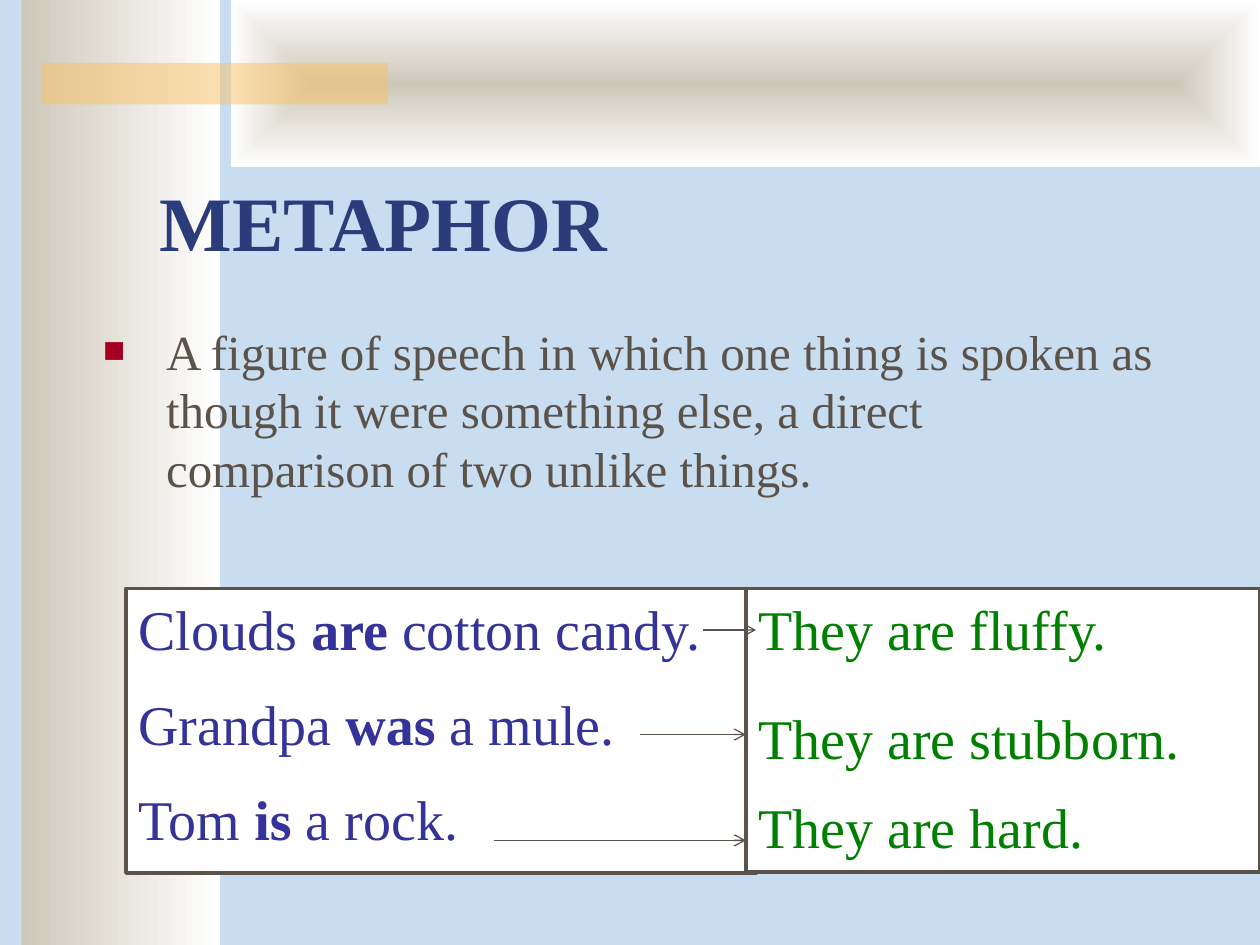
from dataclasses import dataclass

from lxml import etree
from pptx import Presentation
from pptx import util as u
from pptx.dml import color
from pptx.enum import shapes, text
from pptx.oxml import ns


@dataclass(frozen=True)
class Theme:
    font: str = "Times New Roman"
    background: str = "C9DDF1"
    sand: str = "CEC8BA"
    white: str = "FFFFFF"
    accent: str = "FAC164"
    title: str = "2A3D7A"
    body: str = "5B5249"
    bullet: str = "A50021"
    metaphor: str = "333399"
    meaning: str = "008000"
    title_size: int = 44
    body_size: int = 28
    example_size: int = 32


THEME = Theme()


def rgb(value):
    return color.RGBColor.from_string(value)


def add_xml(parent, tag, **attributes):
    return etree.SubElement(parent, ns.qn(tag), attributes)


def add_rectangle(slide, box, fill=None, line=None):
    shape = slide.shapes.add_shape(shapes.MSO_SHAPE.RECTANGLE, *map(u.Inches, box))
    shape.shadow.inherit = False
    if fill:
        shape.fill.solid()
        shape.fill.fore_color.rgb = rgb(fill)
    if line:
        shape.line.color.rgb = rgb(line)
        shape.line.width = u.Pt(2)
    else:
        shape.line.fill.background()
    return shape


def add_gradient_rectangle(slide, box, from_center=False):
    shape = add_rectangle(slide, box)
    shape.fill.gradient()
    shape.fill.gradient_angle = 0
    for stop, value, position in zip(
        shape.fill.gradient_stops, (THEME.sand, THEME.white), (0, 1)
    ):
        stop.color.rgb = rgb(value)
        stop.position = position
    if from_center:
        linear = shape.element.spPr.find(".//" + ns.qn("a:lin"))
        gradient = linear.getparent()
        gradient.remove(linear)
        focus = add_xml(gradient, "a:path", path="shape")
        add_xml(focus, "a:fillToRect", **dict.fromkeys("ltrb", "50000"))


def add_accent_bar(slide, box):
    bar = add_rectangle(slide, box, THEME.accent)
    fill_color = bar.element.spPr.find(ns.qn("a:solidFill"))[0]
    add_xml(fill_color, "a:alpha", val="50000")


def add_bullet(paragraph):
    properties = paragraph._p.get_or_add_pPr()
    indent = u.Inches(0.5)
    properties.set("marL", str(indent))
    properties.set("indent", str(-indent))
    add_xml(add_xml(properties, "a:buClr"), "a:srgbClr", val=THEME.bullet)
    add_xml(properties, "a:buSzPct", val="75000")
    add_xml(properties, "a:buFont", typeface=THEME.font)
    add_xml(properties, "a:buChar", char="■")


def write_text(shape, paragraphs, size, text_color, anchor="TOP", bullet=False):
    """Fill a shape with (space before, runs) pairs; every second run is bold."""
    frame = shape.text_frame
    frame.word_wrap = True
    frame.vertical_anchor = text.MSO_ANCHOR[anchor]
    for index, (space, runs) in enumerate(paragraphs):
        paragraph = frame.add_paragraph() if index else frame.paragraphs[0]
        paragraph.alignment = text.PP_ALIGN.LEFT
        if space:
            paragraph.space_before = u.Pt(space)
        if bullet:
            add_bullet(paragraph)
        for position, words in enumerate(runs):
            if not words:
                continue
            run = paragraph.add_run()
            run.text = words
            formats = {"name": THEME.font, "size": u.Pt(size), "bold": position % 2 == 1}
            for name, value in formats.items():
                setattr(run.font, name, value)
            run.font.color.rgb = rgb(text_color)


def add_text(slide, box, *content, **options):
    write_text(slide.shapes.add_textbox(*map(u.Inches, box)), *content, **options)


def add_example_box(slide, box, paragraphs, text_color):
    shape = add_rectangle(slide, box, THEME.white, THEME.body)
    write_text(shape, paragraphs, THEME.example_size, text_color)


def add_arrow(slide, start, end, y):
    arrow = slide.shapes.add_connector(
        shapes.MSO_CONNECTOR.STRAIGHT, *map(u.Inches, (start, y, end, y))
    )
    arrow.line.color.rgb = rgb(THEME.body)
    arrow.line.width = u.Pt(0.75)
    add_xml(arrow.line._get_or_add_ln(), "a:tailEnd", type="arrow")
    add_xml(arrow.element.spPr, "a:effectLst")


def main():
    presentation = Presentation()
    presentation.slide_width, presentation.slide_height = u.Inches(10), u.Inches(7.5)
    slide = presentation.slides.add_slide(presentation.slide_layouts[6])
    slide.background.fill.solid()
    slide.background.fill.fore_color.rgb = rgb(THEME.background)

    add_gradient_rectangle(slide, (0.17, 0, 1.58, 7.5))
    add_gradient_rectangle(slide, (1.83, 0, 8.17, 1.33), from_center=True)
    add_accent_bar(slide, (0.33, 0.5, 2.75, 0.33))

    add_text(slide, (1.17, 0.92, 8.5, 1.25), [(0, ("", "METAPHOR"))],
             THEME.title_size, THEME.title, anchor="BOTTOM")
    definition = (
        "A figure of speech in which one thing is spoken as though it were "
        "something else, a direct comparison of two unlike things."
    )
    add_text(slide, (0.72, 2.5, 8.58, 2), [(0, (definition,))],
             THEME.body_size, THEME.body, bullet=True)

    metaphors = [
        (0, ("Clouds ", "are", " cotton candy.")),
        (16, ("Grandpa ", "was", " a mule.")),
        (16, ("Tom ", "is", " a rock.")),
    ]
    meanings = [
        (0, ("They are fluffy.",)),
        (24, ("They are stubborn.",)),
        (12, ("They are hard.",)),
    ]
    add_example_box(slide, (1, 4.67, 5, 2.26), metaphors, THEME.metaphor)
    add_example_box(slide, (5.92, 4.67, 4.08, 2.25), meanings, THEME.meaning)
    for start, end, y in ((5.58, 6, 5), (5.08, 5.92, 5.83), (3.92, 5.92, 6.67)):
        add_arrow(slide, start, end, y)

    presentation.save("out.pptx")


if __name__ == "__main__":
    main()
